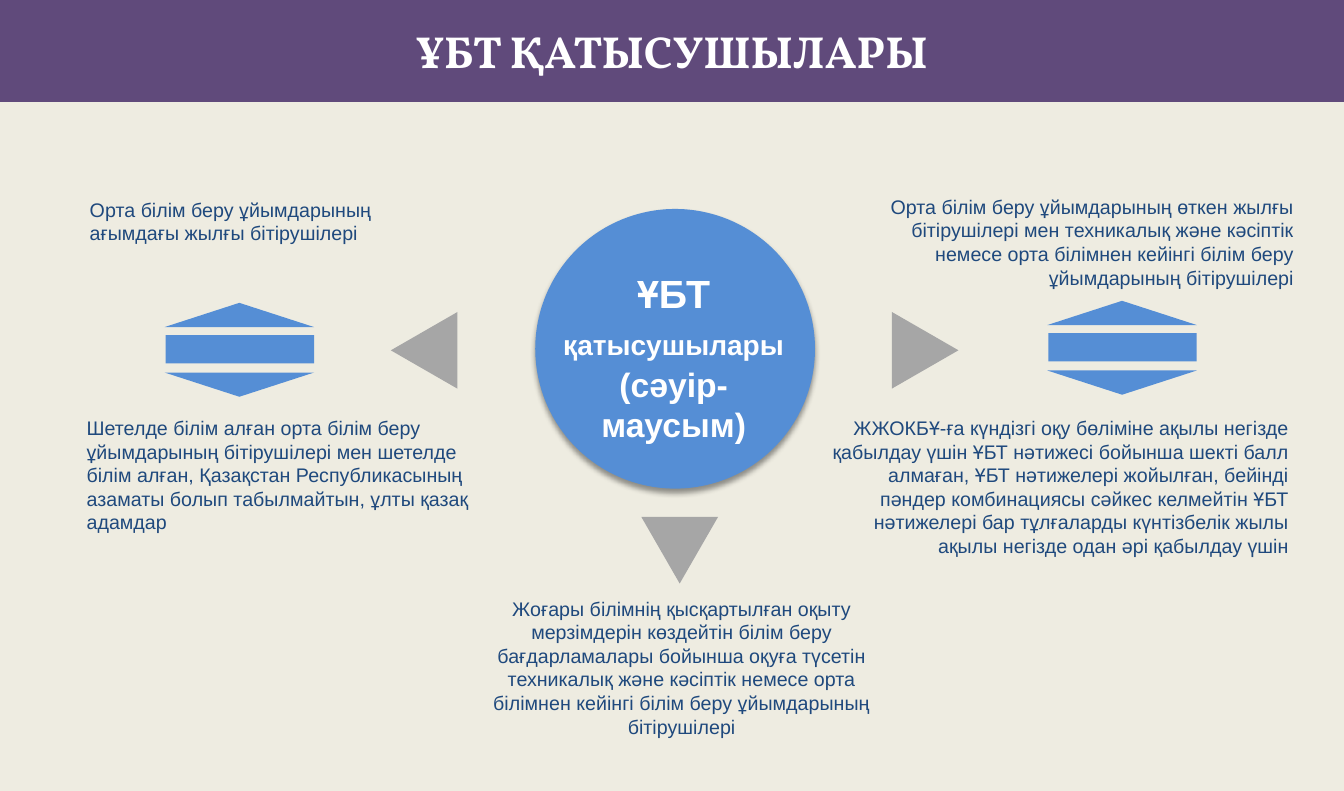
from dataclasses import dataclass

from lxml.etree import SubElement
from pptx import Presentation
from pptx.dml.color import RGBColor
from pptx.enum.shapes import MSO_SHAPE
from pptx.enum.text import MSO_ANCHOR, MSO_AUTO_SIZE, PP_ALIGN
from pptx.oxml.ns import qn
from pptx.shapes.autoshape import Shape
from pptx.slide import Slide
from pptx.util import Inches, Pt


@dataclass(frozen=True)
class Theme:
    background: str = "EEECE1"
    banner: str = "604A7B"
    accent: str = "558ED5"
    arrow: str = "A6A6A6"
    body_text: str = "1F497D"
    light_text: str = "FFFFFF"
    shadow: str = "000000"
    title_font: str = "Vollkorn"
    body_font: str = "Arial"
    title_size: int = 32
    body_size: int = 14
    hub_large: int = 28
    hub_small: int = 20
    hub_medium: int = 24


@dataclass(frozen=True)
class Box:
    left: float
    top: float
    width: float
    height: float

    def lengths(self) -> list[Inches]:
        return [Inches(value) for value in (self.left, self.top, self.width, self.height)]


@dataclass(frozen=True)
class Run:
    text: str
    size: int
    color: str
    font: str
    bold: bool = False


@dataclass(frozen=True)
class Group:
    """One category of participants described beside the hub."""
    box: Box
    align: PP_ALIGN
    text: str


@dataclass(frozen=True)
class Arrow:
    left: float
    top: float
    rotation: int


@dataclass(frozen=True)
class Icon:
    left: float
    top: float


THEME = Theme()
UNITS_PER_INCH = 576
SLIDE_WIDTH, SLIDE_HEIGHT = 7665 / UNITS_PER_INCH, 4513 / UNITS_PER_INCH
BANNER = Box(0, 0, SLIDE_WIDTH, 1.01)
HUB = Box(5.3, 2.07, 2.77, 2.77)
HUB_LABEL = Box(5.33, 2.86, 2.68, 1.35)
ARROWS = [Arrow(3.82, 3.14, 270), Arrow(8.78, 3.14, 90), Arrow(6.35, 5.12, 180)]
ICONS = [Icon(1.63, 3), Icon(10.37, 2.98)]
GROUPS = [
    Group(Box(0.79, 1.91, 3.91, 0.57), PP_ALIGN.LEFT,
          "Орта білім беру ұйымдарының ағымдағы жылғы бітірушілері"),
    Group(Box(0.76, 4.07, 4.33, 1.28), PP_ALIGN.LEFT,
          "Шетелде білім алған орта білім беру ұйымдарының бітірушілері мен шетелде "
          "білім алған, Қазақстан Республикасының азаматы болып табылмайтын, ұлты "
          "қазақ адамдар"),
    Group(Box(8.45, 1.88, 4.46, 1.04), PP_ALIGN.RIGHT,
          "Орта білім беру ұйымдарының өткен жылғы бітірушілері мен техникалық және "
          "кәсіптік немесе орта білімнен кейінгі білім беру ұйымдарының бітірушілері"),
    Group(Box(8.14, 4.07, 4.72, 1.51), PP_ALIGN.RIGHT,
          "ЖЖОКБҰ-ға күндізгі оқу бөліміне ақылы негізде қабылдау үшін ҰБТ нәтижесі "
          "бойынша шекті балл алмаған, ҰБТ нәтижелері жойылған, бейінді пәндер "
          "комбинациясы сәйкес келмейтін ҰБТ нәтижелері бар тұлғаларды күнтізбелік "
          "жылы ақылы негізде одан әрі қабылдау үшін"),
    Group(Box(4.52, 5.86, 4.46, 1.28), PP_ALIGN.CENTER,
          "Жоғары білімнің қысқартылған оқыту мерзімдерін көздейтін білім беру "
          "бағдарламалары бойынша оқуға түсетін техникалық және кәсіптік немесе орта "
          "білімнен кейінгі білім беру ұйымдарының бітірушілері"),
]
HUB_RUNS = [
    Run(text, size, THEME.light_text, THEME.body_font, True)
    for text, size in (
        ("ҰБТ ", THEME.hub_large),
        ("қатысушылары", THEME.hub_small),
        (" ", THEME.hub_large),
        ("(сәуір-маусым)", THEME.hub_medium),
    )
]


def add_solid(slide: Slide, kind: MSO_SHAPE, box: Box, color: str, rotation: int = 0) -> Shape:
    shape = slide.shapes.add_shape(kind, *box.lengths())
    shape.rotation = rotation
    shape.shadow.inherit = False
    shape.fill.solid()
    shape.fill.fore_color.rgb = RGBColor.from_string(color)
    shape.line.fill.background()
    return shape


def write_runs(shape: Shape, runs: list[Run], align: PP_ALIGN, anchor: MSO_ANCHOR) -> None:
    frame = shape.text_frame
    frame.word_wrap = True
    frame.vertical_anchor = anchor
    paragraph = frame.paragraphs[0]
    paragraph.alignment = align
    for item in runs:
        run = paragraph.add_run()
        run.text = item.text
        formats = {"name": item.font, "size": Pt(item.size), "bold": item.bold}
        for attribute, value in formats.items():
            setattr(run.font, attribute, value)
        run.font.color.rgb = RGBColor.from_string(item.color)


def add_text(slide: Slide, box: Box, runs: list[Run], align: PP_ALIGN,
             anchor: MSO_ANCHOR = MSO_ANCHOR.TOP) -> None:
    shape = slide.shapes.add_textbox(*box.lengths())
    write_runs(shape, runs, align, anchor)
    shape.text_frame.auto_size = MSO_AUTO_SIZE.SHAPE_TO_FIT_TEXT


def add_drop_shadow(shape: Shape) -> None:
    """Put a soft downward shadow into the shape's empty effect list."""
    effects = shape.element.spPr.find(qn("a:effectLst"))
    shadow = SubElement(effects, qn("a:outerShdw"), blurRad=str(Pt(4)), dist=str(Pt(3)),
                        dir="5400000", rotWithShape="0")
    color = SubElement(shadow, qn("a:srgbClr"), val=THEME.shadow)
    SubElement(color, qn("a:alpha"), val="40000")


def add_icon(slide: Slide, icon: Icon) -> None:
    """Draw a hexagon cut into a roof, a bar and an inverted roof."""
    parts = [
        (MSO_SHAPE.RECTANGLE, Box(icon.left + 0.01, icon.top + 0.32, 1.47, 0.28), 0),
        (MSO_SHAPE.ISOSCELES_TRIANGLE, Box(icon.left, icon.top, 1.48, 0.24), 0),
        (MSO_SHAPE.ISOSCELES_TRIANGLE, Box(icon.left, icon.top + 0.69, 1.48, 0.24), 180),
    ]
    for kind, box, rotation in parts:
        add_solid(slide, kind, box, THEME.accent, rotation)


def main() -> None:
    presentation = Presentation()
    presentation.slide_width = Inches(SLIDE_WIDTH)
    presentation.slide_height = Inches(SLIDE_HEIGHT)
    slide = presentation.slides.add_slide(presentation.slide_layouts[6])
    slide.background.fill.solid()
    slide.background.fill.fore_color.rgb = RGBColor.from_string(THEME.background)

    banner = add_solid(slide, MSO_SHAPE.RECTANGLE, BANNER, THEME.banner)
    title = Run("ҰБТ ҚАТЫСУШЫЛАРЫ", THEME.title_size, THEME.light_text, THEME.title_font, True)
    write_runs(banner, [title], PP_ALIGN.CENTER, MSO_ANCHOR.MIDDLE)

    add_drop_shadow(add_solid(slide, MSO_SHAPE.OVAL, HUB, THEME.accent))
    add_text(slide, HUB_LABEL, HUB_RUNS, PP_ALIGN.CENTER, MSO_ANCHOR.MIDDLE)
    for arrow in ARROWS:
        box = Box(arrow.left, arrow.top, 0.76, 0.66)
        add_solid(slide, MSO_SHAPE.ISOSCELES_TRIANGLE, box, THEME.arrow, arrow.rotation)
    for icon in ICONS:
        add_icon(slide, icon)
    for group in GROUPS:
        run = Run(group.text, THEME.body_size, THEME.body_text, THEME.body_font)
        add_text(slide, group.box, [run], group.align)

    presentation.save("out.pptx")


if __name__ == "__main__":
    main()
